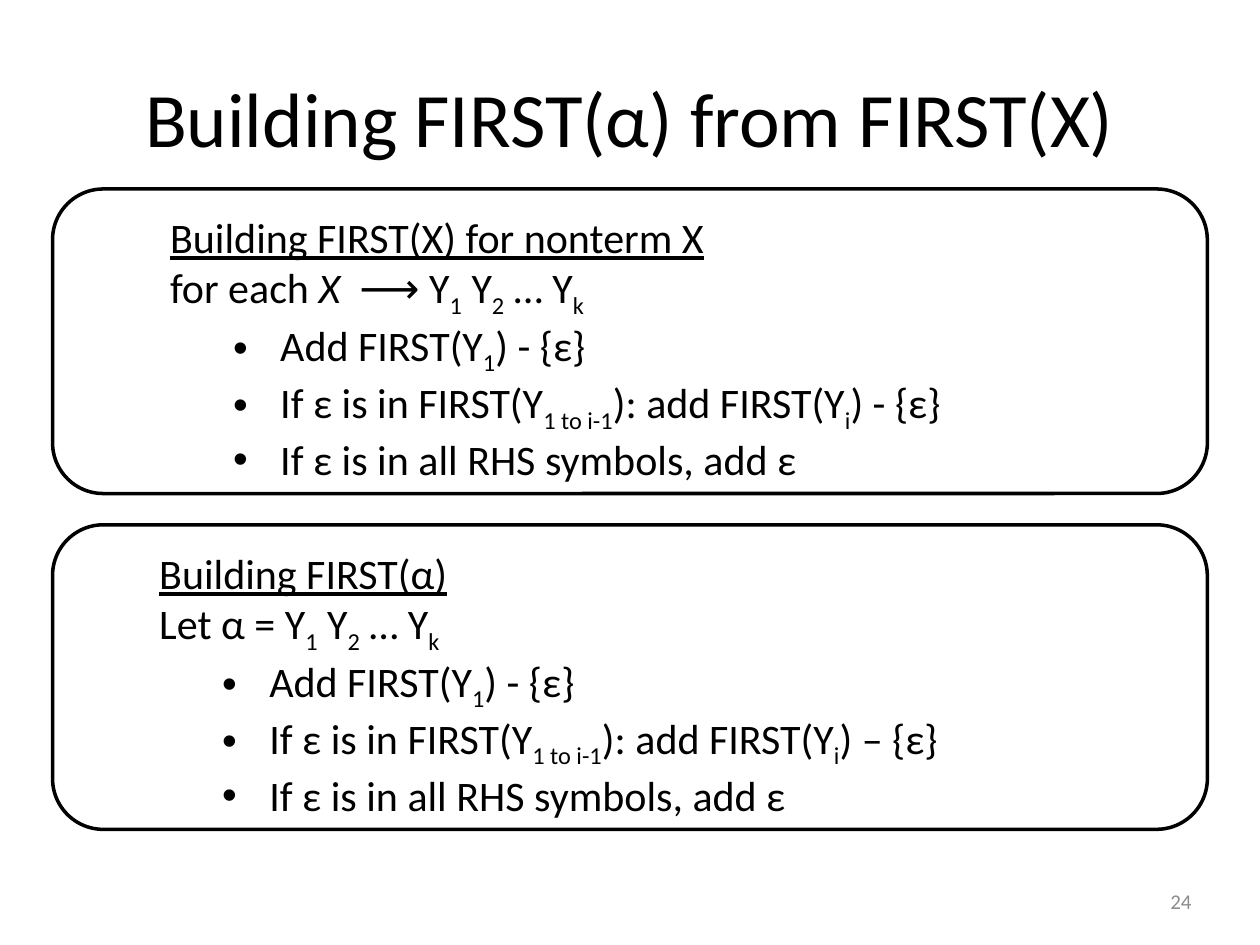
from dataclasses import dataclass

from lxml.etree import SubElement
from pptx import Presentation
from pptx.dml.color import RGBColor
from pptx.enum.shapes import MSO_SHAPE
from pptx.enum.text import MSO_ANCHOR, PP_ALIGN
from pptx.oxml.ns import qn
from pptx.util import Cm, Pt


@dataclass(frozen=True)
class Theme:
    font: str = "Calibri"
    ink: RGBColor = RGBColor(0, 0, 0)
    paper: RGBColor = RGBColor(255, 255, 255)
    muted: RGBColor = RGBColor(0x8C, 0x8C, 0x8C)
    title: int = 44
    body: int = 24
    number: int = 12


theme = Theme()


def add_span(para, text, size=theme.body, color=theme.ink, underline=None, italic=None, subscript=False):
    span = para.add_run()
    span.text = text
    span.font.name = theme.font
    span.font.size = Pt(size)
    span.font.color.rgb = color
    span.font.underline = underline
    span.font.italic = italic
    if subscript:
        span.font._element.set("baseline", "-25000")


def add_bullet(para):
    properties = para._p.get_or_add_pPr()
    properties.set("marL", str(Cm(2.22)))
    properties.set("indent", str(-Cm(0.95)))
    SubElement(properties, qn("a:buFont")).set("typeface", "Arial")
    SubElement(properties, qn("a:buChar")).set("char", "•")


plain, sub, italic = {}, {"subscript": True}, {"italic": True}
symbols = [("1", sub), (" Y", plain), ("2", sub), (" … Y", plain), ("k", sub)]
panels = [
    {
        "top": 3.81,
        "text_left": 3.18,
        "heading": "Building FIRST(X) for nonterm X",
        "premise": [("for each ", plain), ("X", italic), ("  ⟶ Y", plain)],
        "minus": "-",
    },
    {
        "top": 10.58,
        "text_left": 2.96,
        "heading": "Building FIRST(α)",
        "premise": [("Let α = Y", plain)],
        "minus": "–",
    },
]

deck = Presentation()
deck.slide_width, deck.slide_height = Cm(25.4), Cm(19.05)
page = deck.slides.add_slide(deck.slide_layouts[5])

title = page.shapes.title
title.left, title.top, title.width, title.height = Cm(1.27), Cm(0.76), Cm(22.86), Cm(3.18)
title.text_frame.vertical_anchor = MSO_ANCHOR.MIDDLE
title_para = title.text_frame.paragraphs[0]
title_para.alignment = PP_ALIGN.CENTER
add_span(title_para, "Building FIRST(α) from FIRST(X)", size=theme.title)

for panel in panels:
    frame = page.shapes.add_shape(
        MSO_SHAPE.ROUNDED_RECTANGLE, Cm(1.06), Cm(panel["top"]), Cm(23.28), Cm(6.14)
    )
    frame.shadow.inherit = False
    frame.fill.solid()
    frame.fill.fore_color.rgb = theme.paper
    frame.line.color.rgb = theme.ink
    frame.line.width = Pt(2)

    box = page.shapes.add_textbox(Cm(panel["text_left"]), Cm(panel["top"] + 0.33), Cm(19.63), Cm(5.38))
    box.text_frame.word_wrap = True
    heading = box.text_frame.paragraphs[0]
    add_span(heading, panel["heading"], underline=True)

    premise = box.text_frame.add_paragraph()
    for text, style in panel["premise"] + symbols:
        add_span(premise, text, **style)

    rules = [
        [("Add FIRST(Y", plain), ("1", sub), (") - {ε}", plain)],
        [
            ("If ε is in FIRST(Y", plain),
            ("1 to i-1", sub),
            ("): add FIRST(Y", plain),
            ("i", sub),
            (f") {panel['minus']} {{ε}}", plain),
        ],
        [("If ε is in all RHS symbols, add ε", plain)],
    ]
    for rule in rules:
        para = box.text_frame.add_paragraph()
        para.level = 1
        add_bullet(para)
        for text, style in rule:
            add_span(para, text, **style)

number = page.shapes.add_textbox(Cm(18.34), Cm(17.65), Cm(5.93), Cm(1.02))
number.text_frame.word_wrap = True
number.text_frame.vertical_anchor = MSO_ANCHOR.MIDDLE
number_para = number.text_frame.paragraphs[0]
number_para.alignment = PP_ALIGN.RIGHT
add_span(number_para, "24", size=theme.number, color=theme.muted)

deck.save("out.pptx")
